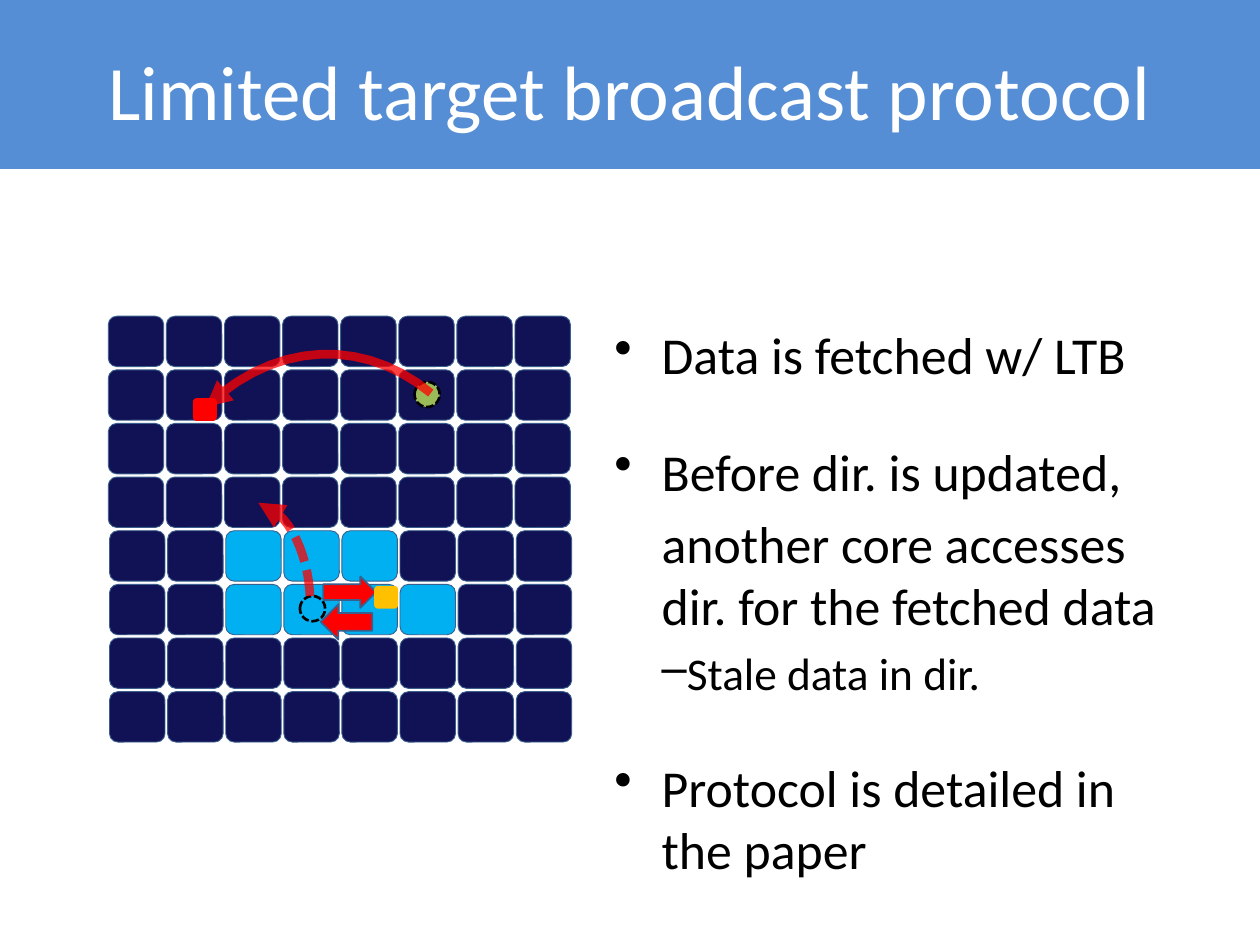
import pptx
import pptx.util
import pptx.dml.color
import pptx.enum.dml
import pptx.enum.shapes
import pptx.enum.text
import pptx.oxml
import pptx.oxml.ns

Pt = pptx.util.Pt
SHAPE = pptx.enum.shapes.MSO_SHAPE
DASH = pptx.enum.dml.MSO_LINE.SQUARE_DOT
ALIGN = pptx.enum.text.PP_ALIGN
ANCHOR = pptx.enum.text.MSO_ANCHOR
qn = pptx.oxml.ns.qn

NAVY, CYAN, RED = "111155", "00B0F0", "FF0000"
EDGE = "3A5F8C"
TARGET_CORES = {(4, 2), (4, 3), (4, 4), (5, 2), (5, 3), (5, 4), (5, 5)}
POINTS = [
    dict(text="Data is fetched w/ LTB", bullet="•", indent=-27),
    dict(text="Before dir. is updated,", bullet="•", indent=-27, before=31),
    dict(text="another core accesses dir. for the fetched data", level=1, before=6),
    dict(text="Stale data in dir.", bullet="–", level=1, size=25.9, before=5),
    dict(text="Protocol is detailed in the paper", bullet="•", indent=-27, before=32),
]


def paint(color_format, hex_color):
    color_format.rgb = pptx.dml.color.RGBColor.from_string(hex_color)


def add_part(slide, kind, left, top, width, height, fill, edge=None, weight=1, dash=None, turn=0):
    part = slide.shapes.add_shape(kind, Pt(left), Pt(top), Pt(width), Pt(height))
    part.shadow.inherit = False
    part.rotation = turn
    part.fill.solid()
    paint(part.fill.fore_color, fill)
    if edge:
        paint(part.line.color, edge)
        part.line.width = Pt(weight)
        part.line.dash_style = dash
    else:
        part.line.fill.background()


def write(paragraph, text, size=29.6, color="000000", align=ALIGN.LEFT, bullet=None,
          margin=0, indent=0, level=0, before=0):
    paragraph.level = level
    paragraph.alignment = align
    paragraph.space_before = Pt(before)
    properties = paragraph._p.get_or_add_pPr()
    properties.set("marL", str(Pt(margin)))
    properties.set("indent", str(Pt(indent)))
    if bullet:
        mark = pptx.oxml.parse_xml(f'<a:buChar {pptx.oxml.ns.nsdecls("a")} char="{bullet}"/>')
        properties.append(mark)
    run = paragraph.add_run()
    run.text = text
    run.font.size = Pt(size)
    run.font.name = "Calibri"
    paint(run.font.color, color)


def add_frame(slide, left, top, width, height, anchor=ANCHOR.TOP):
    frame = slide.shapes.add_textbox(Pt(left), Pt(top), Pt(width), Pt(height)).text_frame
    frame.word_wrap = True
    frame.vertical_anchor = anchor
    return frame


def add_banner(slide, left, top, width, height):
    add_part(slide, SHAPE.RECTANGLE, left, top, width, height, "558ED5")
    heading = add_frame(slide, left + 36, top + 6.5, width - 72, height - 6.5, ANCHOR.MIDDLE)
    write(heading.paragraphs[0], "Limited target broadcast protocol", size=44,
          color="FFFFFF", align=ALIGN.CENTER)


def add_message_arc(slide, left, top, start, pull_a, pull_b, end, dash=None, steps=14):
    def at(t):
        weights = ((1 - t) ** 3, 3 * t * (1 - t) ** 2, 3 * t * t * (1 - t), t ** 3)
        knots = (start, pull_a, pull_b, end)
        x, y = (sum(w * k[axis] for w, k in zip(weights, knots)) for axis in (0, 1))
        return Pt(left + x), Pt(top + y)

    builder = slide.shapes.build_freeform(*at(0))
    builder.add_line_segments([at(i / steps) for i in range(1, steps + 1)], close=False)
    arc = builder.convert_to_shape()
    arc.shadow.inherit = False
    arc.fill.background()
    paint(arc.line.color, RED)
    arc.line.width = Pt(5)
    arc.line.dash_style = dash
    outline = arc.line._get_or_add_ln()
    names = pptx.oxml.ns.nsdecls("a")
    outline.find(".//" + qn("a:srgbClr")).append(
        pptx.oxml.parse_xml(f'<a:alpha {names} val="75000"/>'))
    outline.append(pptx.oxml.parse_xml(f'<a:tailEnd {names} type="triangle"/>'))


def add_core_grid(slide, left, top, count=8):
    for row in range(count):
        for column in range(count):
            shift = 0.72 if row >= count / 2 else 0
            fill = CYAN if (row, column) in TARGET_CORES else NAVY
            add_part(slide, SHAPE.ROUNDED_RECTANGLE, left + shift + 33.2 * column,
                     top + 30.65 * row, 31.7, 28.8, fill, EDGE, 0.5)

    for x, y, fill in ((109.5, 159.9, CYAN), (175, 37.5, "9BBB59")):
        add_part(slide, SHAPE.OVAL, left + x, top + y, 14.4, 14.4, fill, "000000", 1.5, DASH)
    for x, y, width, height, turn in ((126, 159.9, 20.2, 29.5, 90), (128.9, 142.6, 18, 30.2, 270)):
        add_part(slide, SHAPE.DOWN_ARROW, left + x, top + y, width, height, RED, EDGE, turn=turn)
    for x, y, fill in ((151.9, 154.1, "FFC000"), (48.3, 46.8, RED)):
        add_part(slide, SHAPE.ROUNDED_RECTANGLE, left + x, top + y, 13.7, 13, fill)

    add_message_arc(slide, left, top, (184.3, 43.9), (146.9, 13), (96.5, 13), (55.5, 51.9))
    add_message_arc(slide, left, top, (115.2, 159.9), (114.5, 139.7), (105.1, 111.6),
                    (85.7, 106.6), dash=DASH)


def add_points(slide, left, top, width, height):
    frame = add_frame(slide, left, top, width, height)
    for index, point in enumerate(POINTS):
        paragraph = frame.add_paragraph() if index else frame.paragraphs[0]
        write(paragraph, margin=27, **point)


def main():
    deck = pptx.Presentation()
    deck.slide_width, deck.slide_height = Pt(720), Pt(540)
    slide = deck.slides.add_slide(deck.slide_layouts[6])
    add_banner(slide, 0, 0, 720, 96.5)
    add_core_grid(slide, 61.9, 180.7)
    add_points(slide, 344, 181, 340, 312.5)
    deck.save("out.pptx")


if __name__ == "__main__":
    main()
